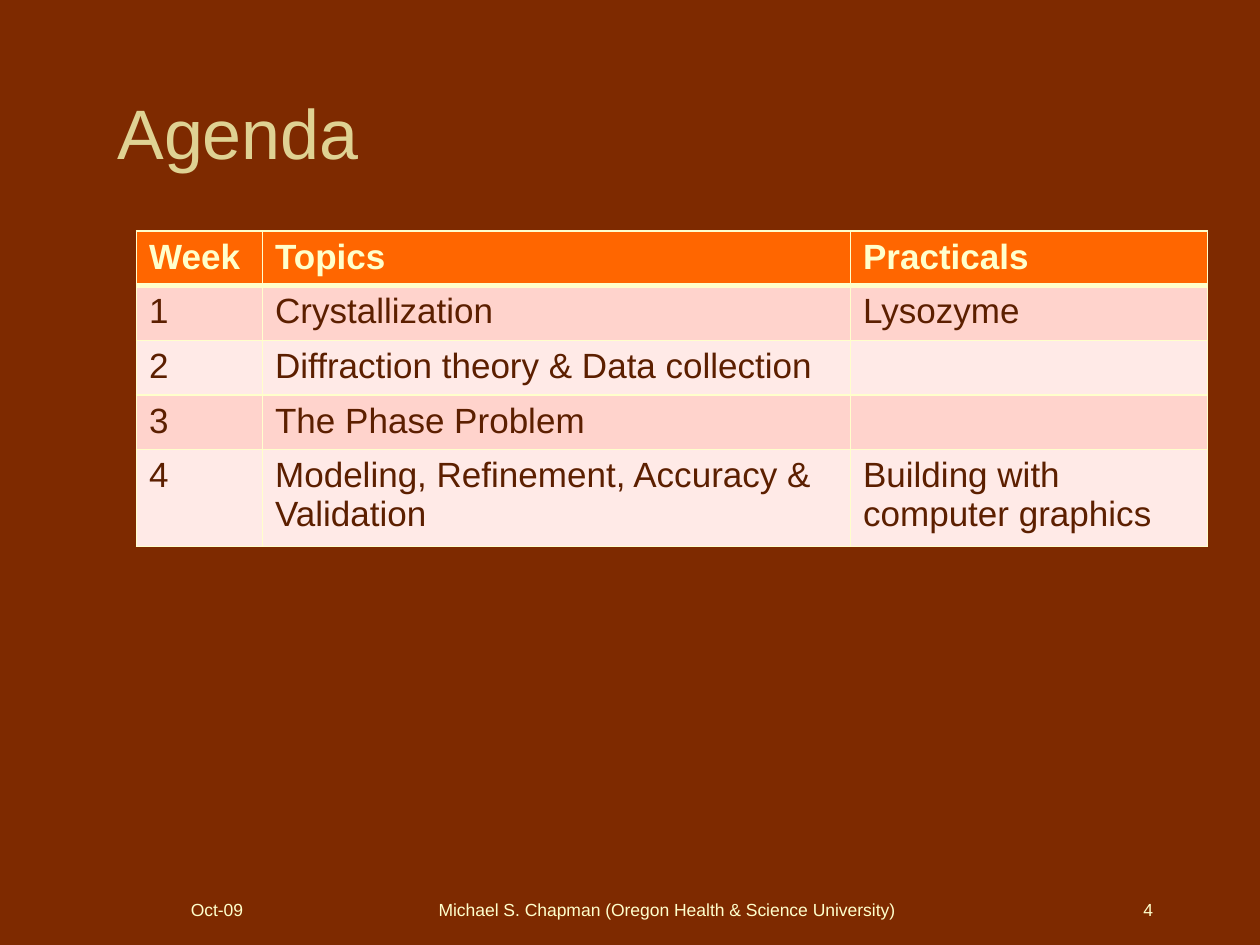
"""Build the course agenda slide: a title, a weekly table and a footer."""
from lxml import etree
from pptx import Presentation
from pptx import util as u
from pptx.dml.color import RGBColor
from pptx.enum import text
from pptx.oxml import ns

theme = {
    "font": "Arial", "back": "7E2A00", "title": "DFD293", "pale": "FFFFCC",
    "dark": "5C1F00", "head": "FF6600", "bands": ("FFEAE7", "FFD3CC"),
    "big": 40, "body": 20, "small": 10,
}
left, mid, right = text.PP_ALIGN.LEFT, text.PP_ALIGN.CENTER, text.PP_ALIGN.RIGHT

deck = Presentation()
deck.slide_width, deck.slide_height = u.Inches(10), u.Inches(7.5)
unit = deck.slide_width / 120
slide = deck.slides.add_slide(deck.slide_layouts[6])
slide.background.fill.solid()
slide.background.fill.fore_color.rgb = RGBColor.from_string(theme["back"])


def write(frame, words, size="body", color="pale", bold=False, align=left):
    frame.word_wrap = True
    para = frame.paragraphs[0]
    para.alignment = align
    run = para.add_run()
    run.text = words
    run.font.name, run.font.size = theme["font"], u.Pt(theme[size])
    run.font.bold = bold
    run.font.color.rgb = RGBColor.from_string(theme[color])


def edge(cell, side, width):
    line = etree.SubElement(cell._tc.get_or_add_tcPr(), ns.qn(f"a:ln{side}"),
                            w=str(u.Pt(width)))
    fill = etree.SubElement(line, ns.qn("a:solidFill"))
    etree.SubElement(fill, ns.qn("a:srgbClr"), val=theme["pale"])


labels = [
    ("Agenda", (10, 6, 105, 13), "big", "title", left),
    ("Oct-09", (17, 85, 17, 3), "small", "pale", left),
    ("Michael S. Chapman (Oregon Health & Science University)",
     (40, 85, 47, 3), "small", "pale", mid),
    ("4", (94, 85, 17, 3), "small", "pale", right),
]
for words, place, size, color, align in labels:
    box = slide.shapes.add_textbox(*(int(n * unit) for n in place))
    write(box.text_frame, words, size=size, color=color, align=align)
    if size == "big":
        box.text_frame.vertical_anchor = text.MSO_ANCHOR.MIDDLE

plan = [
    ("Week", "Topics", "Practicals"),
    ("1", "Crystallization", "Lysozyme"),
    ("2", "Diffraction theory & Data collection", ""),
    ("3", "The Phase Problem", ""),
    ("4", "Modeling, Refinement, Accuracy & Validation",
     "Building with computer graphics"),
]
cols, rows = (12, 56, 34), (4.92, 4.92, 4.92, 4.92, 8.6)
spot = (int(n * unit) for n in (13, 22, sum(cols), sum(rows)))
grid = slide.shapes.add_table(len(rows), len(cols), *spot).table
for col, wide in zip(grid.columns, cols):
    col.width = int(wide * unit)
for r, (row, tall) in enumerate(zip(grid.rows, rows)):
    row.height = int(tall * unit)
    head = r == 0
    tint = theme["head"] if head else theme["bands"][r % 2]
    for cell, words in zip(row.cells, plan[r]):
        for side in "LRTB":
            thick = (r, side) in ((0, "B"), (1, "T"))
            edge(cell, side, 3 if thick else 1)
        cell.fill.solid()
        cell.fill.fore_color.rgb = RGBColor.from_string(tint)
        if words:
            write(cell.text_frame, words, bold=head,
                  color="pale" if head else "dark")

deck.save("out.pptx")
